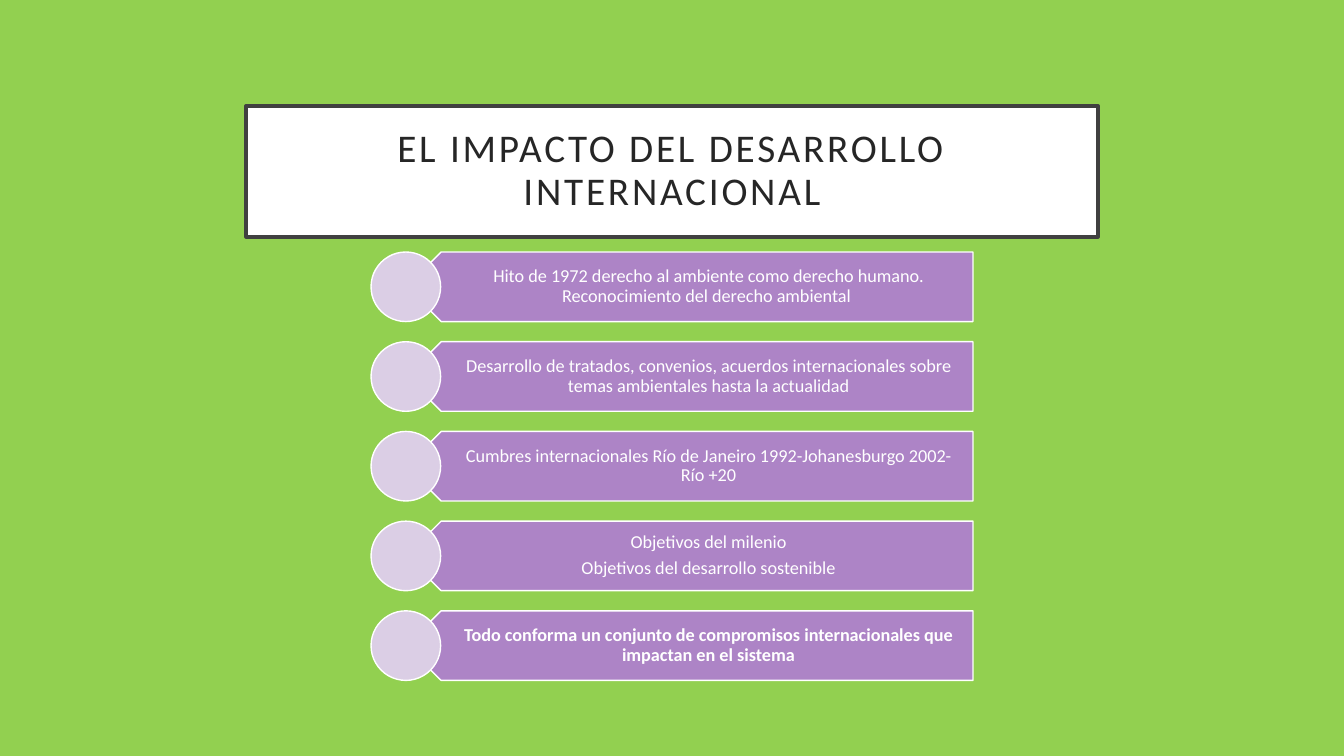
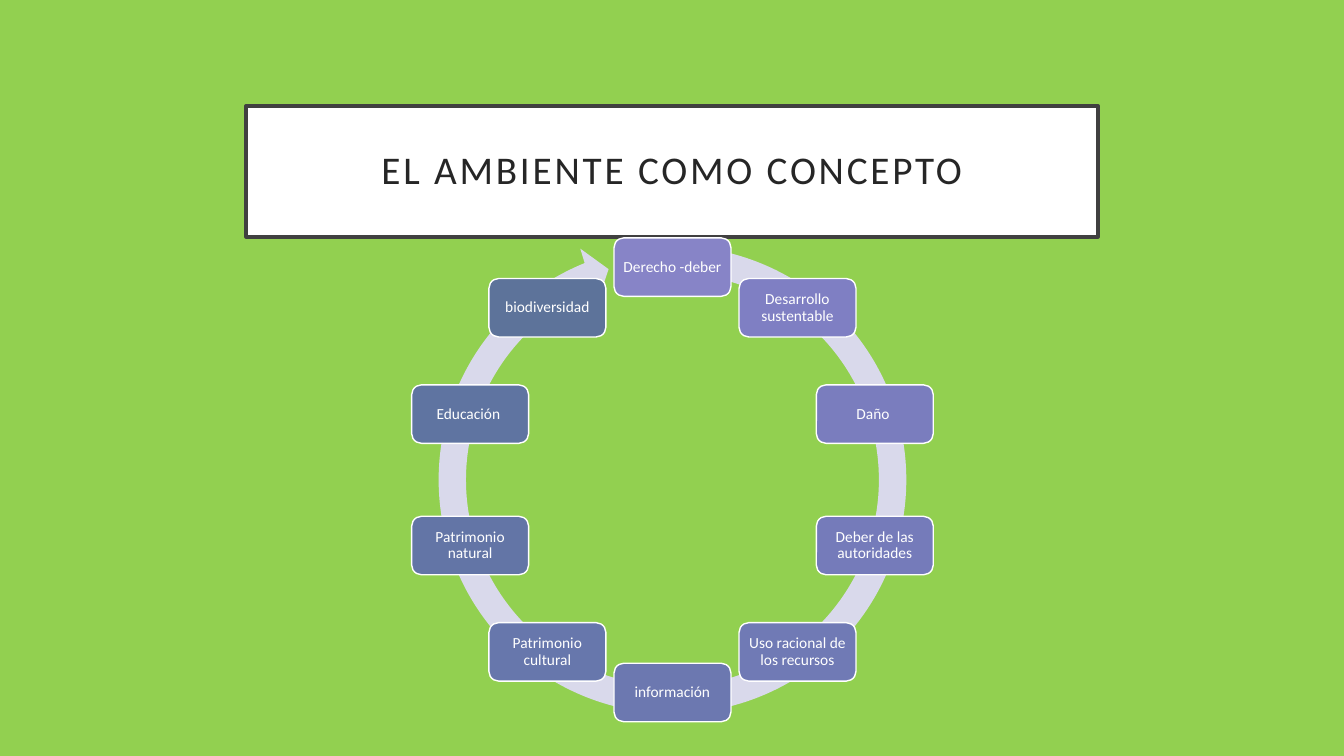
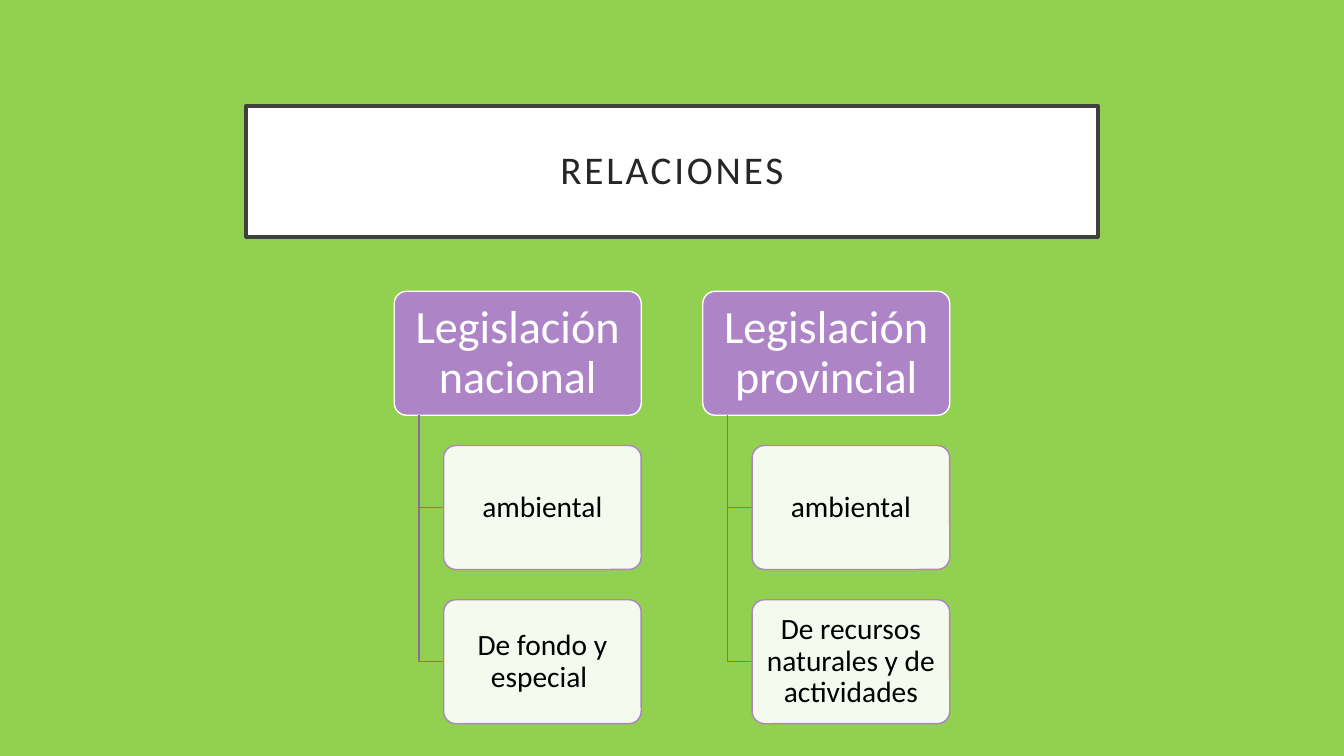
from dataclasses import dataclass
from math import cos, radians, sin

from lxml import etree
from pptx import Presentation
from pptx.dml.color import RGBColor
from pptx.enum import shapes, text
from pptx.oxml import ns
from pptx.util import Inches, Pt

MILESTONES = [
    (["Hito de 1972 derecho al ambiente como derecho humano. Reconocimiento del derecho ambiental "], False),
    (["Desarrollo de tratados, convenios, acuerdos internacionales sobre temas ambientales hasta la actualidad"], False),
    (["Cumbres internacionales Río de Janeiro 1992-Johanesburgo 2002- Río +20"], False),
    (["Objetivos del milenio", "Objetivos del desarrollo sostenible"], False),
    (["Todo conforma un conjunto de compromisos internacionales que impactan en el sistema"], True),
]
CONCEPTS = [
    ("Derecho -deber", "8784C7"),
    ("Desarrollo sustentable", "7F7FC3"),
    ("Daño ", "7A7DBE"),
    ("Deber de las autoridades", "757BBA"),
    ("Uso racional de los recursos", "707AB5"),
    ("información", "6C78B0"),
    ("Patrimonio cultural", "6777AC"),
    ("Patrimonio natural", "6375A6"),
    ("Educación ", "5F74A1"),
    ("biodiversidad", "5D739A"),
]
LEGISLATION = [
    ("Legislación nacional", ["ambiental", "De fondo y especial "]),
    ("Legislación provincial", ["ambiental", "De recursos naturales y de actividades"]),
]


@dataclass(frozen=True)
class Theme:
    font: str = "Calibri"
    background: str = "92D050"
    white: str = "FFFFFF"
    black: str = "000000"
    title_ink: str = "262626"
    title_border: str = "404040"
    purple: str = "AD84C6"
    pale_purple: str = "DBCEE5"
    ring: str = "D9D9EB"
    branch: str = "8B6A9F"
    title_size: float = 28
    milestone_size: float = 13
    concept_size: float = 11
    law_size: float = 33
    topic_size: float = 21


THEME = Theme()
KIND = shapes.MSO_SHAPE


def assign(target, values):
    for name, value in values.items():
        setattr(target, name, value)


def box(left, top, width, height):
    return [Inches(length) for length in (left, top, width, height)]


def paint(shape, fill=None, line=None, weight=1, opacity=None):
    if fill:
        shape.fill.solid()
        shape.fill.fore_color.rgb = RGBColor.from_string(fill)
        if opacity:
            color = shape.fill._xPr.find(".//" + ns.qn("a:srgbClr"))
            etree.SubElement(color, ns.qn("a:alpha")).set("val", str(opacity * 1000))
    else:
        shape.fill.background()
    if line:
        shape.line.color.rgb = RGBColor.from_string(line)
        shape.line.width = Pt(weight)
    else:
        shape.line.fill.background()


def write(shape, paragraphs, size, color, insets, bold=False, tracking=0):
    frame = shape.text_frame
    margins = zip(("left", "top", "right", "bottom"), insets)
    assign(frame, {f"margin_{side}": Inches(inset) for side, inset in margins})
    assign(frame, {"word_wrap": True, "auto_size": text.MSO_AUTO_SIZE.NONE,
                   "vertical_anchor": text.MSO_ANCHOR.MIDDLE})
    frame.text = "\n".join(paragraphs)
    for paragraph in frame.paragraphs:
        assign(paragraph, {"alignment": text.PP_ALIGN.CENTER, "line_spacing": 0.9,
                           "space_before": Pt(0), "space_after": Pt(round(size * 0.35, 1))})
        for run in paragraph.runs:
            assign(run.font, {"name": THEME.font, "size": Pt(size), "bold": bold})
            run.font.color.rgb = RGBColor.from_string(color)
            if tracking:
                run._r.get_or_add_rPr().set("spc", str(tracking * 100))


def add_figure(slide, kind, place, **look):
    figure = slide.shapes.add_shape(kind, *box(*place))
    figure.shadow.inherit = False
    paint(figure, **look)
    return figure


def add_titled_slide(deck, heading):
    slide = deck.slides.add_slide(deck.slide_layouts.get_by_name("Title Only"))
    title = slide.shapes.title
    assign(title, dict(zip(("left", "top", "width", "height"), box(2.44, 1.05, 8.45, 1.3))))
    paint(title, THEME.white, THEME.title_border, 2.5)
    write(title, [heading], THEME.title_size, THEME.title_ink, [0.2] * 4, tracking=2)
    return slide


def build_milestones(deck):
    slide = add_titled_slide(deck, "EL IMPACTO DEL DESARROLLO INTERNACIONAL")
    height, pitch = 0.69, 0.89
    for row, (lines, bold) in enumerate(MILESTONES):
        top = 2.5 + row * pitch
        banner = add_figure(slide, KIND.PENTAGON, (4.03, top, 5.62, height),
                            fill=THEME.purple, line=THEME.white)
        banner.rotation = 180
        caption = slide.shapes.add_textbox(*box(4.2, top, 5.45, height))
        write(caption, lines, THEME.milestone_size, THEME.white, (0.3, 0.05, 0.1, 0.05), bold)
        add_figure(slide, KIND.OVAL, (3.68, top, height, height),
                   fill=THEME.pale_purple, line=THEME.white)


def build_concepts(deck):
    slide = add_titled_slide(deck, "EL AMBIENTE COMO CONCEPTO")
    center_x, center_y, radius, span = 6.67, 4.76, 2.11, 4.94
    width, height = 1.16, 0.58
    ring = add_figure(slide, KIND.CIRCULAR_ARROW,
                      (center_x - span / 2, center_y - span / 2, span, span), fill=THEME.ring)
    degree, percent = 0.6, 0.01
    settings = [5.5 * percent, 5.51 * degree, 247.62 * degree, 279.29 * degree, 5.8 * percent]
    for index, setting in enumerate(settings):
        ring.adjustments[index] = setting
    for index, (concept, color) in enumerate(CONCEPTS):
        angle = radians(index * 360 / len(CONCEPTS))
        left = center_x + radius * sin(angle) - width / 2
        top = center_y - radius * cos(angle) - height / 2
        node = add_figure(slide, KIND.ROUNDED_RECTANGLE, (left, top, width, height),
                          fill=color, line=THEME.white)
        write(node, [concept], THEME.concept_size, THEME.white, [0.05] * 4)


def add_branch(slide, left, top, right, bottom):
    pen = slide.shapes.build_freeform(Inches(left), Inches(top))
    corners = [(left, bottom), (right, bottom)]
    pen.add_line_segments([(Inches(x), Inches(y)) for x, y in corners], close=False)
    branch = pen.convert_to_shape()
    branch.shadow.inherit = False
    paint(branch, line=THEME.branch)


def add_card(slide, place, label, size, color, insets, **look):
    card = add_figure(slide, KIND.ROUNDED_RECTANGLE, place, **look)
    card.adjustments[0] = 0.1
    write(card, [label], size, color, insets)


def build_legislation(deck):
    slide = add_titled_slide(deck, "RELACIONES")
    first_top, row_pitch, column_pitch = 2.89, 1.53, 3.06
    law_width, height, indent = 2.45, 1.23, 0.49
    for column, (law, topics) in enumerate(LEGISLATION):
        left = 3.91 + column * column_pitch
        add_card(slide, (left, first_top, law_width, height), law, THEME.law_size, THEME.white,
                 (0.07, 0.05, 0.07, 0.05), fill=THEME.purple, line=THEME.white)
        for row, topic in enumerate(topics, 1):
            top = first_top + row * row_pitch
            add_branch(slide, left + indent / 2, first_top + height,
                       left + indent, top + height / 2)
            add_card(slide, (left + indent, top, law_width - indent, height), topic,
                     THEME.topic_size, THEME.black, (0.04, 0.03, 0.04, 0.03),
                     fill=THEME.white, line=THEME.purple, opacity=90)


def main():
    deck = Presentation()
    assign(deck, {"slide_width": Inches(13.33), "slide_height": Inches(7.5)})
    backdrop = deck.slide_master.background.fill
    backdrop.solid()
    backdrop.fore_color.rgb = RGBColor.from_string(THEME.background)
    for build in (build_milestones, build_concepts, build_legislation):
        build(deck)
    deck.save("out.pptx")


if __name__ == "__main__":
    main()
